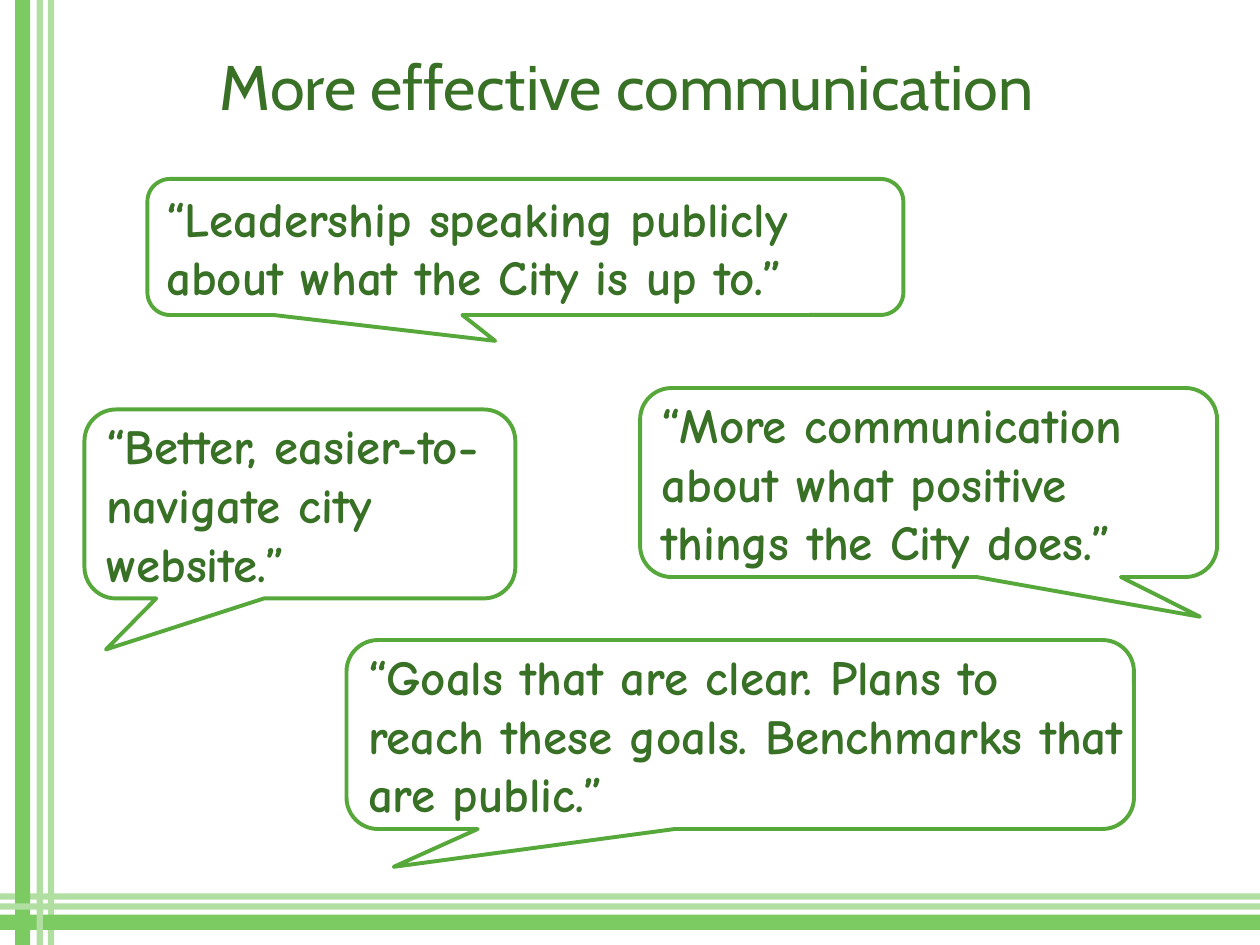
from pptx import Presentation
from pptx.dml.color import RGBColor
from pptx.enum.shapes import MSO_SHAPE as Shape
from pptx.enum.text import MSO_ANCHOR as Anchor, MSO_AUTO_SIZE as AutoSize, PP_ALIGN as Align
from pptx.util import Inches, Pt

WHITE = RGBColor(0xFF, 0xFF, 0xFF)
PALE_GREEN = RGBColor(0xB0, 0xDF, 0xA1)
BRIGHT_GREEN = RGBColor(0x7C, 0xCA, 0x62)
OUTLINE_GREEN = RGBColor(0x55, 0xA8, 0x39)
TEXT_GREEN = RGBColor(0x38, 0x70, 0x26)

WIDTH, HEIGHT = 10, 7.5
THIN, THICK = 0.05, 0.12

STRIPES = [
    (0, 7.09, WIDTH, THIN, PALE_GREEN),
    (0.38, 0, THIN, HEIGHT, PALE_GREEN),
    (0, 7.26, WIDTH, THICK, BRIGHT_GREEN),
    (0.12, 0, THICK, HEIGHT, BRIGHT_GREEN),
    (0.29, 0, THIN, HEIGHT, PALE_GREEN),
    (0, 7.17, WIDTH, THIN, PALE_GREEN),
]

QUOTES = [
    ("“Goals that are clear. Plans to reach these goals. Benchmarks that are public.”",
     (2.75, 5.08, 6.25, 1.5), (-0.44, 0.7)),
    ("“Better, easier-to-navigate city website.”",
     (0.67, 3.25, 3.42, 1.5), (-0.45, 0.77)),
    ("“More communication about what positive things the City does.”",
     (5.08, 3.08, 4.58, 1.5), (0.47, 0.71)),
    ("“Leadership speaking publicly about what the City is up to.”",
     (1.17, 1.42, 6, 1.08), (-0.04, 0.69)),
]


def write(shape, text, font_name, size, align, bold=False):
    """Put one styled paragraph into a shape."""
    shape.text_frame.word_wrap = True
    para = shape.text_frame.paragraphs[0]
    para.text = text
    para.alignment = align
    font = para.font
    font.name, font.size, font.bold = font_name, Pt(size), bold
    font.color.rgb = TEXT_GREEN


def add_filled(page, kind, bounds, color):
    """Add a preset shape with a plain fill and no shadow."""
    shape = page.shapes.add_shape(kind, *map(Inches, bounds))
    shape.shadow.inherit = False
    shape.fill.solid()
    shape.fill.fore_color.rgb = color
    return shape


def add_stripe(page, left, top, width, height, color):
    """Add a border stripe without an outline."""
    stripe = add_filled(page, Shape.RECTANGLE, (left, top, width, height), color)
    stripe.line.fill.background()


def add_title(page, text):
    """Add the centred slide title."""
    box = page.shapes.add_textbox(Inches(1.58), Inches(0.33), Inches(6.79), Inches(0.71))
    box.text_frame.auto_size = AutoSize.SHAPE_TO_FIT_TEXT
    write(box, text, "Cabin", 36, Align.CENTER)


def add_quote(page, text, bounds, tip):
    """Add a speech bubble whose tail ends at the given tip."""
    bubble = add_filled(page, Shape.ROUNDED_RECTANGULAR_CALLOUT, bounds, WHITE)
    bubble.adjustments[0], bubble.adjustments[1] = tip
    bubble.line.color.rgb = OUTLINE_GREEN
    bubble.line.width = Pt(2.25)
    frame = bubble.text_frame
    frame.vertical_anchor = Anchor.MIDDLE
    frame.margin_left = Inches(0.1)
    frame.margin_top = frame.margin_right = frame.margin_bottom = 0
    write(bubble, text, "Comic Neue", 28, Align.LEFT, bold=True)


def main():
    """Build and save the slide."""
    deck = Presentation()
    deck.slide_width, deck.slide_height = Inches(WIDTH), Inches(HEIGHT)
    page = deck.slides.add_slide(deck.slide_layouts[6])
    for stripe in STRIPES:
        add_stripe(page, *stripe)
    add_title(page, "More effective communication")
    for quote in QUOTES:
        add_quote(page, *quote)
    deck.save("out.pptx")


if __name__ == "__main__":
    main()
